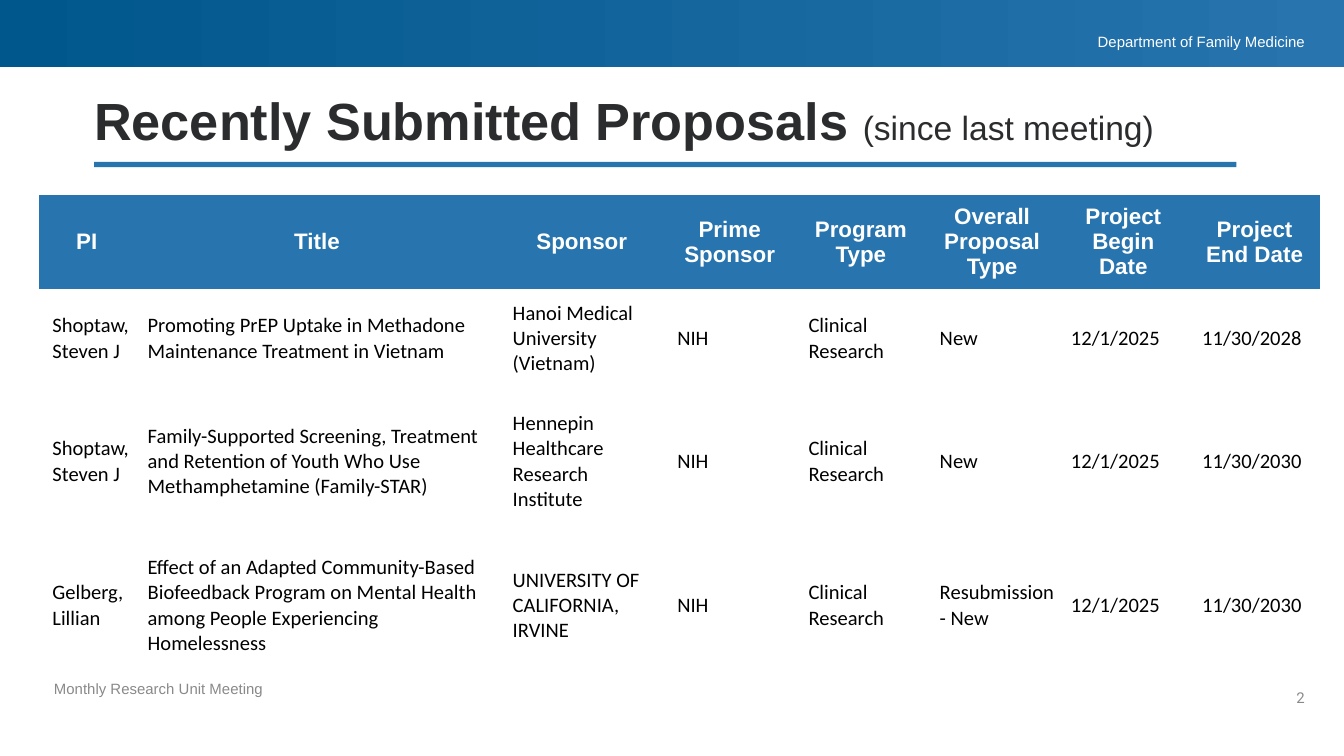
from pptx import Presentation
from pptx.dml.color import RGBColor
from pptx.enum import shapes, text
from pptx.oxml import ns
from pptx.util import Cm, Pt

COLORS = {
    "blue": "2774AE",
    "navy": "00578B",
    "ink": "2B2C2E",
    "grey": "898989",
    "white": "FFFFFF",
    "black": "000000",
}
NO_STYLE_NO_GRID = "{2D5ABB26-0587-4C30-8999-92F81FD0307C}"


def style(span, size, color, name="Arial", bold=False):
    span.font.size = Pt(size)
    span.font.name = name
    span.font.bold = bold
    span.font.color.rgb = RGBColor.from_string(COLORS[color])


def set_margins(target, left, top, right, bottom):
    target.margin_left, target.margin_top = Cm(left), Cm(top)
    target.margin_right, target.margin_bottom = Cm(right), Cm(bottom)


deck = Presentation()
deck.slide_width, deck.slide_height = Cm(25.4), Cm(14.29)
page = deck.slides.add_slide(deck.slide_layouts[5])

# Header band and title rule
band = page.shapes.add_shape(shapes.MSO_SHAPE.RECTANGLE, 0, 0, Cm(25.4), Cm(1.27))
band.fill.gradient()
band.fill.gradient_angle = 0
for stop, color in zip(band.fill.gradient_stops, ("navy", "blue")):
    stop.color.rgb = RGBColor.from_string(COLORS[color])

rule = page.shapes.add_shape(
    shapes.MSO_SHAPE.RECTANGLE, Cm(1.78), Cm(3.06), Cm(21.59), Cm(0.1))
rule.fill.solid()
rule.fill.fore_color.rgb = RGBColor.from_string(COLORS["blue"])

for bar in (band, rule):
    bar.line.fill.background()
    bar.shadow.inherit = False

# Title
title = page.shapes.title
title.left, title.top, title.width, title.height = Cm(1.78), Cm(1.78), Cm(21.59), Cm(1.09)
frame = title.text_frame
set_margins(frame, 0, 0, 0, 0)
frame.word_wrap = True
frame.auto_size = text.MSO_AUTO_SIZE.NONE
frame.vertical_anchor = text.MSO_ANCHOR.BOTTOM
para = frame.paragraphs[0]
para.alignment = text.PP_ALIGN.LEFT
para.line_spacing = 0.9
for words, size, bold in (("Recently Submitted Proposals ", 28, True),
                          ("(since last meeting)", 18, False)):
    span = para.add_run()
    span.text = words
    style(span, size, "ink", bold=bold)

# Small labels: words, place, margins, alignment, colour, font
LEFT, RIGHT = text.PP_ALIGN.LEFT, text.PP_ALIGN.RIGHT
labels = [
    ("Department of Family Medicine", (18.29, 0.58, 6.38, 0.36),
     (0.25, 0.03, 0, 0.03), RIGHT, "white", "Arial"),
    ("Monthly Research Unit Meeting", (1.02, 13.03, 9.91, 1.02),
     (0, 0, 0, 0.71), LEFT, "grey", "Arial"),
    ("2", (23.39, 13.21, 1.27, 1.02),
     (0, 0, 0, 0.71), RIGHT, "grey", "Roboto"),
]
for words, place, margins, align, color, font in labels:
    box = page.shapes.add_textbox(*map(Cm, place))
    frame = box.text_frame
    frame.word_wrap = True
    set_margins(frame, *margins)
    frame.text = words
    para = frame.paragraphs[0]
    para.alignment = align
    style(para.runs[0], 8, color, font)

# Proposals table
rows = [
    ("PI", "Title", "Sponsor", "Prime Sponsor", "Program Type",
     "Overall Proposal Type", "Project Begin Date", "Project End Date"),
    ("Shoptaw, Steven J",
     "Promoting PrEP Uptake in Methadone Maintenance Treatment in Vietnam",
     "Hanoi Medical University (Vietnam)", "NIH", "Clinical Research",
     "New", "12/1/2025", "11/30/2028"),
    ("Shoptaw, Steven J",
     "Family-Supported Screening, Treatment and Retention of Youth "
     "Who Use Methamphetamine (Family-STAR)",
     "Hennepin Healthcare Research Institute", "NIH", "Clinical Research",
     "New", "12/1/2025", "11/30/2030"),
    ("Gelberg, Lillian",
     "Effect of an Adapted Community-Based Biofeedback Program on "
     "Mental Health among People Experiencing Homelessness",
     "UNIVERSITY OF CALIFORNIA, IRVINE", "NIH", "Clinical Research",
     "Resubmission - New", "12/1/2025", "11/30/2030"),
]
widths = [1.8, 6.9, 3.11] + [2.48] * 5
heights = [1.77, 1.84, 2.81, 2.64]
holder = page.shapes.add_table(
    len(rows), len(widths), Cm(0.74), Cm(3.68), Cm(sum(widths)), Cm(sum(heights)))
table = holder.table
table.horz_banding = False
holder._element.find(".//" + ns.qn("a:tableStyleId")).text = NO_STYLE_NO_GRID

for column, width in zip(table.columns, widths):
    column.width = Cm(width)
for row, height in zip(table.rows, heights):
    row.height = Cm(height)

for r, values in enumerate(rows):
    for c, value in enumerate(values):
        cell = table.cell(r, c)
        cell.text = value
        cell.vertical_anchor = text.MSO_ANCHOR.MIDDLE
        cell.fill.solid()
        cell.fill.fore_color.rgb = RGBColor.from_string(COLORS["white" if r else "blue"])
        para = cell.text_frame.paragraphs[0]
        if r == 0:
            para.alignment = text.PP_ALIGN.CENTER
            style(para.runs[0], 12, "white", bold=True)
        else:
            set_margins(cell, 0.25, 0.03, 0.03, 0)
            style(para.runs[0], 11, "black", "Calibri")

deck.save("out.pptx")
